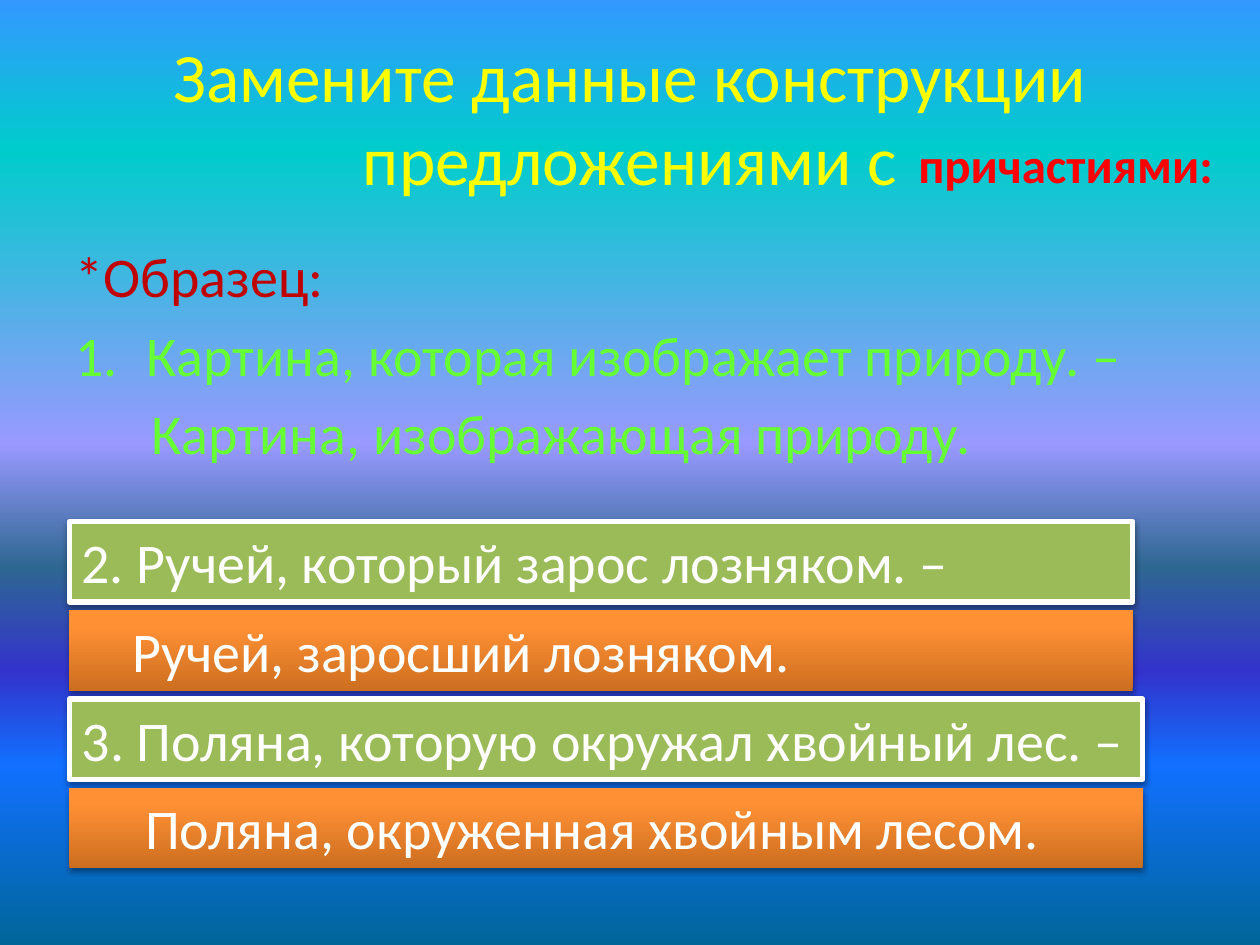
from dataclasses import dataclass

from lxml.etree import SubElement
from pptx import Presentation
from pptx.dml.color import RGBColor
from pptx.enum.shapes import MSO_SHAPE
from pptx.enum.text import MSO_ANCHOR as Anchor, MSO_AUTO_SIZE as AutoSize, PP_ALIGN as Align
from pptx.oxml.ns import qn
from pptx.util import Pt

YELLOW = RGBColor(0xFF, 0xFF, 0x00)
RED = RGBColor(0xFF, 0x00, 0x00)
DARK_RED = RGBColor(0xC0, 0x00, 0x00)
LIME = RGBColor(0x66, 0xFF, 0x33)
WHITE = RGBColor(0xFF, 0xFF, 0xFF)
BLACK = RGBColor(0x00, 0x00, 0x00)
OLIVE = RGBColor(0x9B, 0xBB, 0x59)

SKY_STOPS = [
    (0, RGBColor(0x33, 0x99, 0xFF)),
    (16, RGBColor(0x00, 0xCC, 0xCC)),
    (47, RGBColor(0x99, 0x99, 0xFF)),
    (60, RGBColor(0x2E, 0x67, 0x92)),
    (71, RGBColor(0x33, 0x33, 0xCC)),
    (81, RGBColor(0x11, 0x70, 0xFF)),
    (100, RGBColor(0x00, 0x66, 0x99)),
]
ORANGE_STOPS = [
    (0, RGBColor(0xCC, 0x6E, 0x20)),
    (80, RGBColor(0xFF, 0x90, 0x34)),
    (100, RGBColor(0xFF, 0x91, 0x36)),
]

BAR_LEFT, BAR_TOP, BAR_HEIGHT, BAR_PITCH = 39.6, 298, 46, 50.7


@dataclass
class SampleLine:
    text: str
    color: RGBColor
    margin: float
    indent: float
    numbered: bool = False


@dataclass
class Bar:
    text: str
    width: float
    is_answer: bool
    indent: float = 0


SAMPLE = [
    SampleLine("*Образец:", DARK_RED, 27, -27),
    SampleLine("Картина, которая изображает природу. –", LIME, 40.5, -40.5, True),
    SampleLine("Картина, изображающая природу.", LIME, 43.4, 0),
]
BARS = [
    Bar("2. Ручей, который зарос лозняком. –", 607.7, False),
    Bar("Ручей, заросший лозняком.", 607.7, True, 28.9),
    Bar("3. Поляна, которую окружал хвойный лес. –", 613.4, False),
    Bar("Поляна, окруженная хвойным лесом.", 613.4, True, 36.2),
]


def place(shape, left: float, top: float, width: float, height: float) -> None:
    shape.left, shape.top = Pt(left), Pt(top)
    shape.width, shape.height = Pt(width), Pt(height)


def write(paragraph, text: str, size: float, color: RGBColor, bold: bool = False) -> None:
    run = paragraph.add_run()
    run.text = text
    for name, value in {"name": "Calibri", "size": Pt(size), "bold": bold}.items():
        setattr(run.font, name, value)
    run.font.color.rgb = color


def format_frame(frame, anchor: Anchor) -> None:
    settings = {"word_wrap": True, "auto_size": AutoSize.NONE, "vertical_anchor": anchor}
    for name, value in settings.items():
        setattr(frame, name, value)


def indent_paragraph(paragraph, margin: float, indent: float):
    properties = paragraph._p.get_or_add_pPr()
    properties.set("marL", str(Pt(margin)))
    properties.set("indent", str(Pt(indent)))
    return properties


def add_color(parent, color: RGBColor):
    return SubElement(parent, qn("a:srgbClr"), val=str(color))


def fill_gradient(fill, element, stops: list, angle: int) -> None:
    """Fill with the given stops; angle is counter-clockwise in degrees."""
    fill.gradient()
    fill.gradient_angle = angle
    stop_list = element.find(".//" + qn("a:gsLst"))
    for stop in list(stop_list):
        stop_list.remove(stop)
    for percent, color in stops:
        add_color(SubElement(stop_list, qn("a:gs"), pos=str(percent * 1000)), color)


def add_shadow(shape, distance: float, opacity: int) -> None:
    shape.shadow.inherit = False
    effects = shape._element.spPr.find(qn("a:effectLst"))
    shadow = SubElement(effects, qn("a:outerShdw"), blurRad=str(Pt(3.1)),
                        dist=str(Pt(distance)), dir="5400000", rotWithShape="0")
    SubElement(add_color(shadow, BLACK), qn("a:alpha"), val=str(opacity * 1000))


def add_title(slide) -> None:
    title = slide.shapes.title
    place(title, 36, 21.6, 648, 90)
    format_frame(title.text_frame, Anchor.MIDDLE)
    paragraph = title.text_frame.paragraphs[0]
    paragraph.alignment = Align.CENTER
    write(paragraph, "Замените данные конструкции предложениями с", 39.6, YELLOW)

    keyword = slide.shapes.add_textbox(Pt(517.7), Pt(73.4), Pt(191.5), Pt(41))
    format_frame(keyword.text_frame, Anchor.TOP)
    write(keyword.text_frame.paragraphs[0], "причастиями:", 28, RED, bold=True)


def add_sample(slide, lines: list[SampleLine]) -> None:
    body = slide.placeholders[1]
    place(body, 36, 134.6, 648, 140.4)
    frame = body.text_frame
    format_frame(frame, Anchor.TOP)
    for index, line in enumerate(lines):
        paragraph = frame.add_paragraph() if index else frame.paragraphs[0]
        paragraph.space_before = Pt(6.4)
        properties = indent_paragraph(paragraph, line.margin, line.indent)
        if line.numbered:
            SubElement(properties, qn("a:buFont"), typeface="+mj-lt")
            SubElement(properties, qn("a:buAutoNum"), type="arabicPeriod")
        else:
            SubElement(properties, qn("a:buNone"))
        write(paragraph, line.text, 32, line.color)


def add_bar(slide, bar: Bar, top: float) -> None:
    shape = slide.shapes.add_shape(
        MSO_SHAPE.RECTANGLE, Pt(BAR_LEFT), Pt(top), Pt(bar.width), Pt(BAR_HEIGHT))
    if bar.is_answer:
        fill_gradient(shape.fill, shape._element, ORANGE_STOPS, 90)
        shape.line.fill.background()
        add_shadow(shape, 1.8, 35)
    else:
        shape.fill.solid()
        shape.fill.fore_color.rgb = OLIVE
        shape.line.color.rgb = WHITE
        shape.line.width = Pt(3)
        add_shadow(shape, 1.6, 38)
    format_frame(shape.text_frame, Anchor.TOP)
    paragraph = shape.text_frame.paragraphs[0]
    paragraph.alignment = Align.LEFT
    indent_paragraph(paragraph, bar.indent, 0)
    write(paragraph, bar.text, 32, WHITE)


def main() -> None:
    presentation = Presentation()
    presentation.slide_width, presentation.slide_height = Pt(720), Pt(540)
    slide = presentation.slides.add_slide(presentation.slide_layouts[1])
    fill_gradient(slide.background.fill, slide.element, SKY_STOPS, 270)
    add_title(slide)
    add_sample(slide, SAMPLE)
    for row, bar in enumerate(BARS):
        add_bar(slide, bar, BAR_TOP + row * BAR_PITCH)
    presentation.save("out.pptx")


if __name__ == "__main__":
    main()
